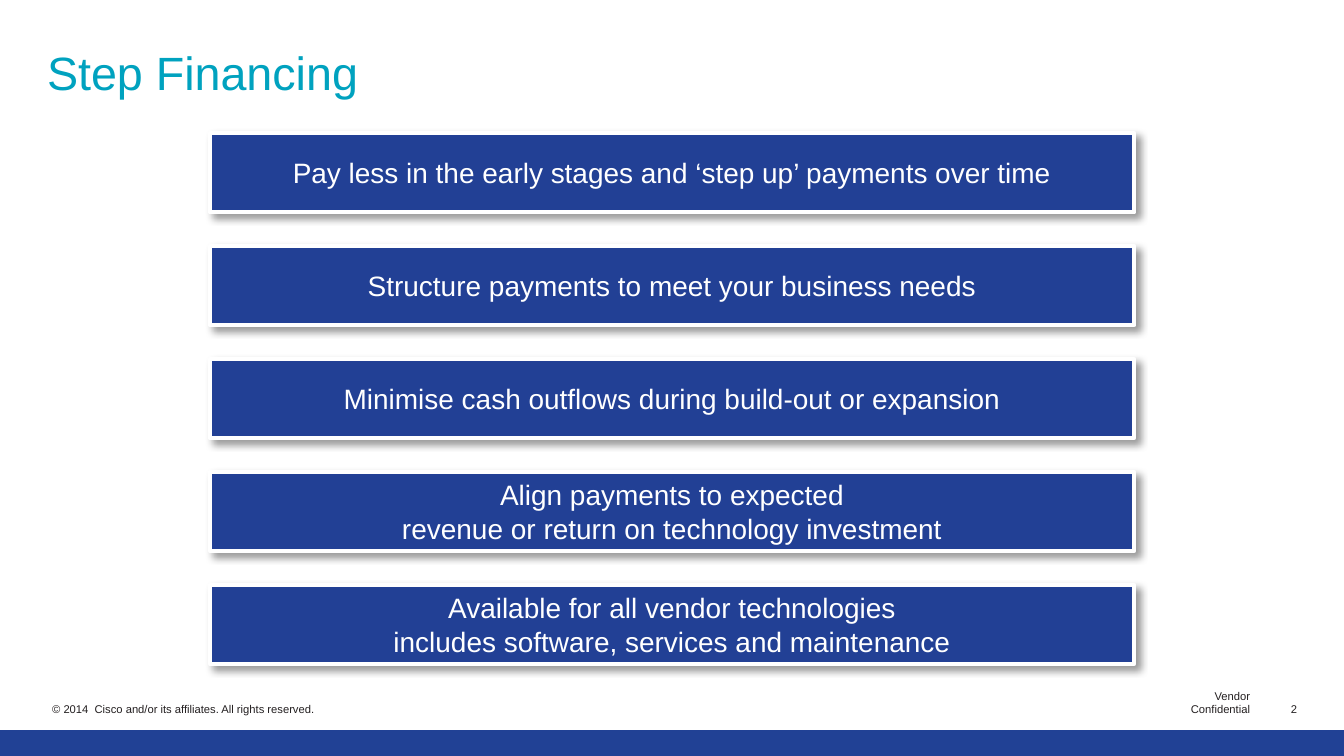
from lxml import etree
from pptx import Presentation
from pptx.dml.color import RGBColor
from pptx.enum import shapes, text
from pptx.oxml.ns import qn
from pptx.util import Pt

TITLE = "Step Financing"
BENEFITS = [
    "Pay less in the early stages and ‘step up’ payments over time",
    "Structure payments to meet your business needs",
    "Minimise cash outflows during build-out or expansion",
    "Align payments to expected\nrevenue or return on technology investment",
    "Available for all vendor technologies\nincludes software, services and maintenance",
]
LEFT, RIGHT = text.PP_ALIGN.LEFT, text.PP_ALIGN.RIGHT
# text, left, width, alignment, wrap
FOOTERS = [
    ("© 2014  Cisco and/or its affiliates. All rights reserved.", 23, 269.3, LEFT, True),
    ("Vendor Confidential", 614.9, 59.8, RIGHT, False),
    ("2", 682.6, 17.3, RIGHT, False),
]
COLORS = {"title": "00A2BF", "bar": "224095", "band": "214195",
          "white": "FFFFFF", "footer": "231F20", "shadow": "000000"}

SLIDE_W, SLIDE_H = 720, 405
BAR_W, BAR_H, BAR_TOP, BAR_STEP = 495.4, 42.5, 71.3, 60.5
BAND_W = 14


def rgb(name):
    return RGBColor.from_string(COLORS[name])


def write(tf, content, size, color, align):
    p = tf.paragraphs[0]
    p.text = content
    p.alignment = align
    p.font.size, p.font.name = Pt(size), "Arial"
    p.font.color.rgb = rgb(color)
    return p


def add_title(s):
    sp = s.shapes.title
    sp.left, sp.top, sp.width, sp.height = Pt(18), Pt(25.2), Pt(676), Pt(49.7)
    tf = sp.text_frame
    tf.vertical_anchor = text.MSO_ANCHOR.TOP
    tf.auto_size = text.MSO_AUTO_SIZE.NONE
    tf.margin_top = Pt(4)
    write(tf, TITLE, 25, "title", LEFT).line_spacing = 0.8


def add_drop_shadow(sp):
    sp.shadow.inherit = False
    effects = sp._element.spPr.find(qn("a:effectLst"))
    shadow = etree.SubElement(effects, qn("a:outerShdw"), blurRad=str(Pt(4)),
                              dist=str(Pt(3)), dir="2700000", algn="tl", rotWithShape="0")
    color = etree.SubElement(shadow, qn("a:srgbClr"), val=COLORS["shadow"])
    etree.SubElement(color, qn("a:alpha"), val="40000")


def add_bar(s, content, top):
    sp = s.shapes.add_shape(shapes.MSO_SHAPE.RECTANGLE, Pt((SLIDE_W - BAR_W) / 2),
                            Pt(top), Pt(BAR_W), Pt(BAR_H))
    sp.fill.solid()
    sp.fill.fore_color.rgb = rgb("bar")
    sp.line.color.rgb = rgb("white")
    sp.line.width = Pt(2)
    add_drop_shadow(sp)
    sp.text_frame.vertical_anchor = text.MSO_ANCHOR.MIDDLE
    write(sp.text_frame, content, 15, "white", text.PP_ALIGN.CENTER)


def add_footer(s, content, left, width, align, wrap):
    tf = s.shapes.add_textbox(Pt(left), Pt(373.7), Pt(width), Pt(12.2)).text_frame
    tf.word_wrap = wrap
    tf.vertical_anchor = text.MSO_ANCHOR.BOTTOM
    tf.margin_left = tf.margin_right = Pt(5)
    tf.margin_top = tf.margin_bottom = Pt(2.4)
    write(tf, content, 6, "footer", align)


def add_band(s):
    y = Pt(SLIDE_H - BAND_W / 2)
    band = s.shapes.add_connector(shapes.MSO_CONNECTOR.STRAIGHT, 0, y, Pt(SLIDE_W), y)
    band.line.color.rgb = rgb("band")
    band.line.width = Pt(BAND_W)
    etree.SubElement(band._element.spPr, qn("a:effectLst"))


def main():
    prs = Presentation()
    prs.slide_width, prs.slide_height = Pt(SLIDE_W), Pt(SLIDE_H)
    s = prs.slides.add_slide(prs.slide_layouts[5])
    add_title(s)
    for i, benefit in enumerate(BENEFITS):
        add_bar(s, benefit, BAR_TOP + i * BAR_STEP)
    for footer in FOOTERS:
        add_footer(s, *footer)
    add_band(s)
    prs.save("out.pptx")


if __name__ == "__main__":
    main()
